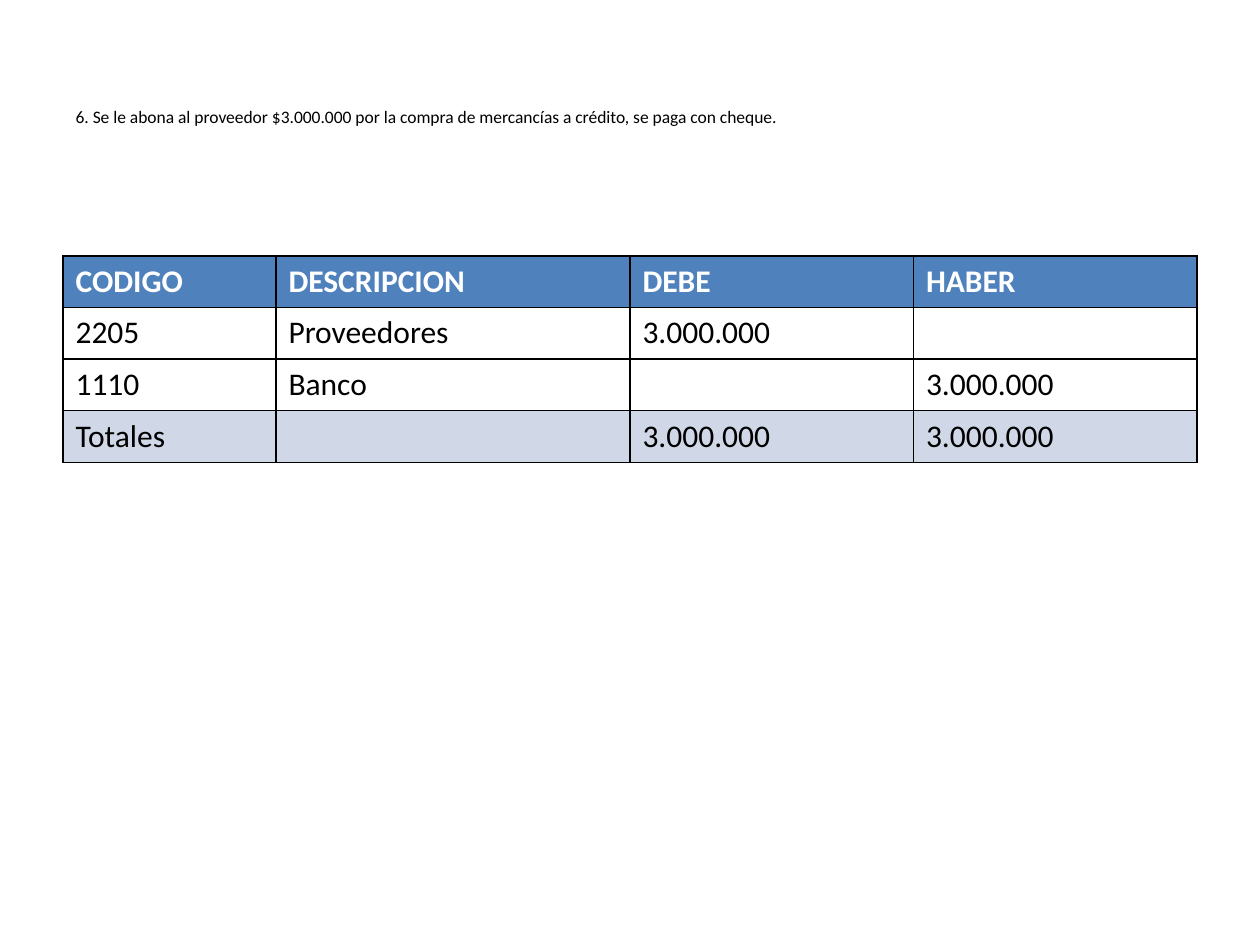
from lxml import etree
from pptx import Presentation
from pptx.dml.color import RGBColor
from pptx.enum.text import MSO_ANCHOR, PP_ALIGN
from pptx.oxml.ns import qn
from pptx.util import Inches, Pt

MIDDLE = MSO_ANCHOR.MIDDLE
LEFT, JUSTIFY = PP_ALIGN.LEFT, PP_ALIGN.JUSTIFY
TITLE_ONLY = 5
FONT = "Calibri"
COLORS = {"text": "000000", "header_text": "FFFFFF", "header": "4F81BD",
          "totals": "D0D8E8", "border": "000000"}

STATEMENT = ("6. Se le abona al proveedor $3.000.000 por la compra de "
             "mercancías a crédito, se paga con cheque.")
ENTRIES = [
    ["CODIGO", "DESCRIPCION", "DEBE", "HABER"],
    ["2205", "Proveedores", "3.000.000", ""],
    ["1110", "Banco", "", "3.000.000"],
    ["Totales", "", "3.000.000", "3.000.000"],
]
COLUMN_WIDTHS = [1.69, 2.81, 2.25, 2.25]
ROW_HEIGHT = 0.41


def write_text(frame, text, size=18, color="text", bold=False, align=LEFT):
    para = frame.paragraphs[0]
    para.alignment = align
    para.font.size = Pt(size)
    if text:
        span = para.add_run()
        span.text = text
        span.font.name = FONT
        span.font.size = Pt(size)
        span.font.bold = bold
        span.font.color.rgb = RGBColor.from_string(COLORS[color])


def add_title(page):
    title = page.shapes.title
    title.left, title.top = Inches(0.5), Inches(0.3)
    title.width, title.height = Inches(9), Inches(1.25)
    title.text_frame.vertical_anchor = MIDDLE
    write_text(title.text_frame, STATEMENT, size=10, align=JUSTIFY)


def add_borders(cell):
    properties = cell._tc.get_or_add_tcPr()
    for side in ("a:lnL", "a:lnR", "a:lnT", "a:lnB"):
        line = etree.SubElement(properties, qn(side), w=str(Pt(1)))
        fill = etree.SubElement(line, qn("a:solidFill"))
        etree.SubElement(fill, qn("a:srgbClr"), val=COLORS["border"])


def format_cell(cell, text, fill=None, **text_format):
    write_text(cell.text_frame, text, **text_format)
    # Borders come before the fill in the cell properties
    add_borders(cell)
    if fill:
        cell.fill.solid()
        cell.fill.fore_color.rgb = RGBColor.from_string(COLORS[fill])
    else:
        cell.fill.background()


def add_ledger(page):
    last = len(ENTRIES) - 1
    table = page.shapes.add_table(
        len(ENTRIES), len(COLUMN_WIDTHS), Inches(0.5), Inches(2.03),
        Inches(sum(COLUMN_WIDTHS)), Inches(ROW_HEIGHT * len(ENTRIES))).table
    table.horz_banding = False
    for column, width in zip(table.columns, COLUMN_WIDTHS):
        column.width = Inches(width)

    # Header and totals rows have their own format
    formats = {0: {"fill": "header", "color": "header_text", "bold": True},
               last: {"fill": "totals"}}
    for index, (row, texts) in enumerate(zip(table.rows, ENTRIES)):
        row.height = Inches(ROW_HEIGHT)
        for cell, text in zip(row.cells, texts):
            format_cell(cell, text, **formats.get(index, {}))


def main():
    deck = Presentation()
    deck.slide_width, deck.slide_height = Inches(10), Inches(7.5)
    page = deck.slides.add_slide(deck.slide_layouts[TITLE_ONLY])
    add_title(page)
    add_ledger(page)
    deck.save("out.pptx")


if __name__ == "__main__":
    main()
